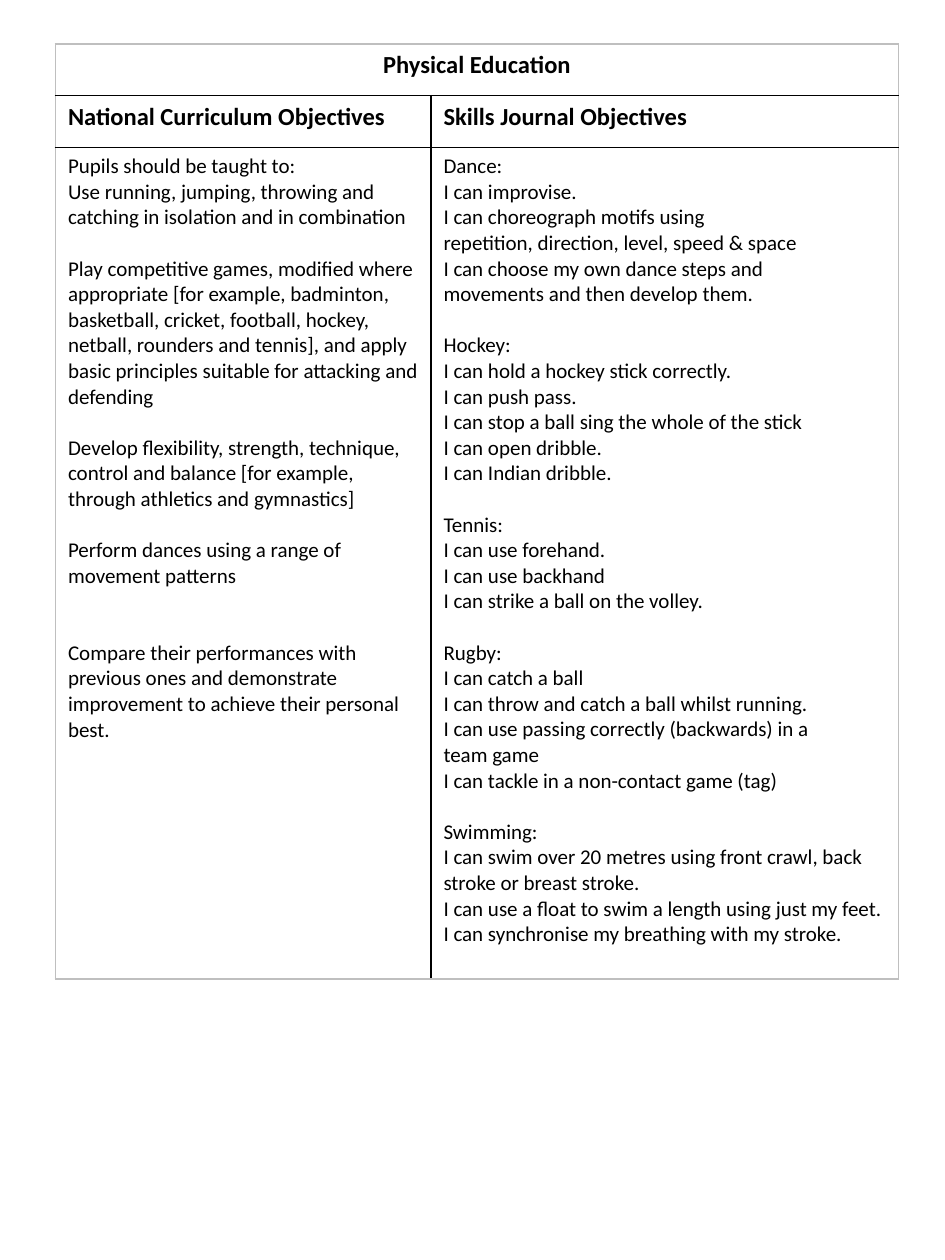
"""Builds a one-page table of Physical Education objectives."""
from typing import NamedTuple

from lxml.etree import SubElement
from pptx import Presentation
from pptx.dml.color import RGBColor
from pptx.enum.text import PP_ALIGN as Align
from pptx.oxml.ns import qn
from pptx.util import Inches, Pt

BLACK = RGBColor(0x00, 0x00, 0x00)
GREY = RGBColor(0xBF, 0xBF, 0xBF)
FONT = "Calibri"
LINE_PITCH = 14.65
NO_BREAK_SPACE = chr(160)
COLUMN_WIDTHS = (2.98, 3.71)
ROW_HEIGHTS = (0.41, 0.41, 6.6)


class Section(NamedTuple):
    lines: tuple[str, ...]
    lines_above: int = 1


CURRICULUM = (
    Section((
        "Pupils should be taught to:",
        "Use running, jumping, throwing and catching in isolation and in combination",
    ), 0),
    Section((
        "Play competitive games, modified where appropriate [for example, badminton, "
        "basketball, cricket, football, hockey, netball, rounders and tennis], and apply "
        "basic principles suitable for attacking and defending",
    )),
    Section((
        "Develop flexibility, strength, technique, control and balance "
        "[for example, through athletics and gymnastics]",
    )),
    Section(("Perform dances using a range of movement patterns",)),
    Section((
        "Compare their performances with previous ones and demonstrate "
        "improvement to achieve their personal best.",
    ), 2),
)
SKILLS = (
    Section((
        "Dance:",
        "I can improvise.",
        "I can choreograph motifs using repetition,~direction,~level, speed & space",
        "I can choose my own dance steps and",
        "movements and then develop them.",
    ), 0),
    Section((
        "Hockey:",
        "I can hold a hockey stick correctly.",
        "I can push pass.",
        "I can stop a ball sing the whole of the stick",
        "I can open dribble.",
        "I can Indian dribble.",
    )),
    Section((
        "Tennis:",
        "I can use forehand.",
        "I can use backhand",
        "I can strike a ball on the volley.",
    )),
    Section((
        "Rugby:",
        "I can catch a ball",
        "I can throw and catch a ball whilst running.",
        "I can use passing correctly (backwards) in a team~game",
        "I can tackle in a non-contact game (tag)",
    )),
    Section((
        "Swimming:",
        "I can swim over 20 metres using front crawl, back",
        "stroke or breast stroke.",
        "I can use a float to swim a length using just my feet.",
        "I can synchronise my breathing with my stroke.",
    )),
)


def write_sections(cell, sections: tuple[Section, ...], size: int, bold: bool = False,
                   alignment: Align = Align.LEFT) -> None:
    """Write sections into a cell, separated by paragraph spacing."""
    frame = cell.text_frame
    lines = [(line, section.lines_above if index == 0 else 0)
             for section in sections for index, line in enumerate(section.lines)]
    for index, (line, lines_above) in enumerate(lines):
        paragraph = frame.add_paragraph() if index else frame.paragraphs[0]
        paragraph.text = line.replace("~", NO_BREAK_SPACE)
        paragraph.alignment = alignment
        paragraph.space_before = Pt(lines_above * LINE_PITCH)
        font = paragraph.font
        font.name, font.size, font.bold = FONT, Pt(size), bold
        font.color.rgb = BLACK


def set_borders(cell, colors: dict[str, RGBColor]) -> None:
    """Draw one-point cell borders, keyed by side, beneath an empty fill."""
    properties = cell._tc.get_or_add_tcPr()
    for side, color in colors.items():
        line = SubElement(properties, qn(f"a:ln{side}"), w=str(Pt(1)))
        fill = SubElement(line, qn("a:solidFill"))
        SubElement(fill, qn("a:srgbClr"), val=str(color))
    cell.fill.background()


def build_table(slide) -> None:
    """Add the objectives table with its headings and text."""
    last_row, last_column = len(ROW_HEIGHTS) - 1, len(COLUMN_WIDTHS) - 1
    table = slide.shapes.add_table(
        len(ROW_HEIGHTS), len(COLUMN_WIDTHS), Inches(0.44), Inches(0.35),
        Inches(sum(COLUMN_WIDTHS)), Inches(sum(ROW_HEIGHTS))).table
    table.first_row = table.horz_banding = False
    for column, width in zip(table.columns, COLUMN_WIDTHS):
        column.width = Inches(width)
    for row, height in zip(table.rows, ROW_HEIGHTS):
        row.height = Inches(height)
    table.cell(0, 0).merge(table.cell(0, last_column))

    for row in range(last_row + 1):
        for column in range(last_column + 1):
            right_edge = row == 0 or column == last_column
            set_borders(table.cell(row, column), {
                "L": GREY if column == 0 else BLACK,
                "R": GREY if right_edge else BLACK,
                "T": GREY if row == 0 else BLACK,
                "B": GREY if row == last_row else BLACK,
            })

    title = (Section(("Physical Education",), 0),)
    write_sections(table.cell(0, 0), title, 14, True, Align.CENTER)
    columns = (("National Curriculum Objectives", CURRICULUM),
               ("Skills Journal Objectives", SKILLS))
    for column, (heading, sections) in enumerate(columns):
        write_sections(table.cell(1, column), (Section((heading,), 0),), 14, True)
        write_sections(table.cell(2, column), sections, 12)


def main() -> None:
    """Create and save the presentation."""
    presentation = Presentation()
    presentation.slide_width, presentation.slide_height = Inches(7.5), Inches(10)
    build_table(presentation.slides.add_slide(presentation.slide_layouts[6]))
    presentation.save("out.pptx")


if __name__ == "__main__":
    main()
